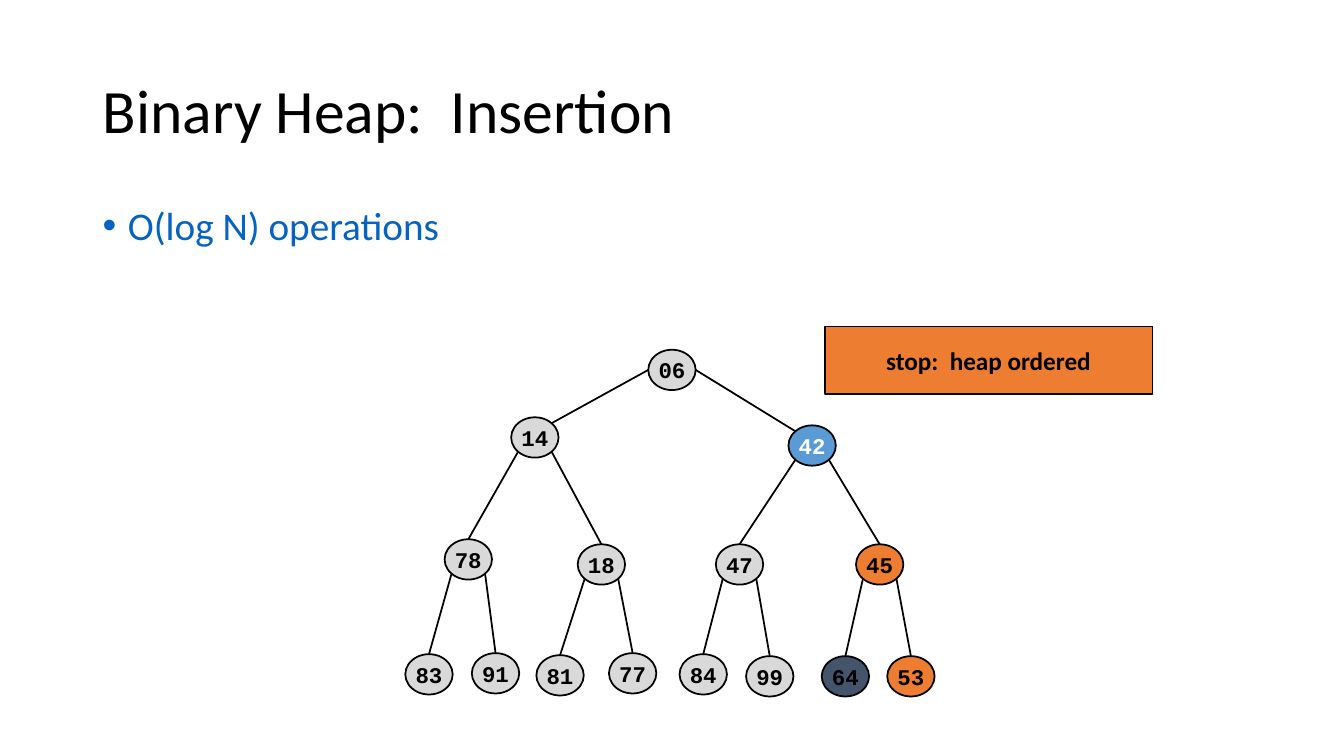
import math
from dataclasses import dataclass

from lxml import etree
from pptx import Presentation
from pptx.dml.color import RGBColor
from pptx.enum.shapes import MSO_CONNECTOR, MSO_SHAPE
from pptx.enum.text import MSO_ANCHOR, MSO_AUTO_SIZE, PP_ALIGN
from pptx.oxml.ns import qn
from pptx.util import Inches, Pt

STRAIGHT = MSO_CONNECTOR.STRAIGHT
OVAL, RECTANGLE = MSO_SHAPE.OVAL, MSO_SHAPE.RECTANGLE
TOP, MIDDLE = MSO_ANCHOR.TOP, MSO_ANCHOR.MIDDLE
LEFT, CENTER = PP_ALIGN.LEFT, PP_ALIGN.CENTER
NO_AUTOFIT = MSO_AUTO_SIZE.NONE

BLACK, WHITE, GREY = "000000", "FFFFFF", "D9D9D9"
BLUE, ORANGE, SLATE, LINK_BLUE = "5B9BD5", "ED7D31", "44546A", "0563C1"
NODE_WIDTH, NODE_HEIGHT = 0.47, 0.4
DIAGONAL = math.sqrt(0.5)


@dataclass
class Node:
    key: str
    left: float
    top: float
    fill: str = GREY
    color: str = BLACK

    def rim(self, across: float, down: float) -> tuple[float, float]:
        """Point on the outline, in half axes from the centre."""
        return (self.left + NODE_WIDTH / 2 * (1 + across),
                self.top + NODE_HEIGHT / 2 * (1 + down))


# Level order: the children of node i are 2i + 1 and 2i + 2
HEAP = [
    Node("06", 6.43, 3.47),
    Node("14", 5.07, 4.14),
    Node("42", 7.82, 4.22, BLUE, WHITE),
    Node("78", 4.41, 5.35),
    Node("18", 5.73, 5.4),
    Node("47", 7.1, 5.4),
    Node("45", 8.49, 5.4, ORANGE),
    Node("83", 4.02, 6.49),
    Node("91", 4.68, 6.48),
    Node("81", 5.32, 6.5),
    Node("77", 6.04, 6.48),
    Node("84", 6.74, 6.49),
    Node("99", 7.4, 6.51),
    Node("64", 8.15, 6.51, SLATE),
    Node("53", 8.8, 6.51, ORANGE),
]


def rgb(value: str) -> RGBColor:
    return RGBColor.from_string(value)


def write(box, text: str, size: int, color: str, font: str = "Calibri",
          bold: bool = False, align=CENTER, anchor=MIDDLE, wrap: bool = False):
    frame = box.text_frame
    frame.text = text
    frame_format = {"auto_size": NO_AUTOFIT, "word_wrap": wrap, "vertical_anchor": anchor}
    for name, value in frame_format.items():
        setattr(frame, name, value)
    para = frame.paragraphs[0]
    para.alignment = align
    span = para.runs[0]
    for name, value in {"name": font, "size": Pt(size), "bold": bold}.items():
        setattr(span.font, name, value)
    span.font.color.rgb = rgb(color)
    return para


def add_filled_shape(page, kind, left: float, top: float, width: float,
                     height: float, fill: str):
    shape = page.shapes.add_shape(
        kind, Inches(left), Inches(top), Inches(width), Inches(height))
    shape.shadow.inherit = False
    shape.fill.solid()
    shape.fill.fore_color.rgb = rgb(fill)
    shape.line.color.rgb = rgb(BLACK)
    shape.line.width = Pt(1.25)
    return shape


def add_edge(page, index: int) -> None:
    """Join a node to its parent."""
    child, parent = HEAP[index], HEAP[(index - 1) // 2]
    side = -1 if index % 2 else 1
    if index <= 2:
        start = parent.rim(side, 0)
        end = child.rim(-side * DIAGONAL, -DIAGONAL)
    else:
        start = parent.rim(side * DIAGONAL, DIAGONAL)
        end = child.rim(0, -1)
    edge = page.shapes.add_connector(STRAIGHT, *map(Inches, start + end))
    edge.line.color.rgb = rgb(BLACK)
    edge.line.width = Pt(1.25)
    etree.SubElement(edge._element.spPr, qn("a:effectLst"))


def add_node(page, node: Node) -> None:
    shape = add_filled_shape(
        page, OVAL, node.left, node.top, NODE_WIDTH, NODE_HEIGHT, node.fill)
    write(shape, node.key, 16, node.color, "Courier New", bold=True)


def add_bullet(para) -> None:
    properties = para._p.get_or_add_pPr()
    properties.set("marL", str(Inches(0.25)))
    properties.set("indent", str(Inches(-0.25)))
    font = etree.SubElement(properties, qn("a:buFont"))
    font.set("typeface", "Arial")
    bullet = etree.SubElement(properties, qn("a:buChar"))
    bullet.set("char", "•")


def main() -> None:
    deck = Presentation()
    deck.slide_width, deck.slide_height = Inches(13.33), Inches(7.5)
    page = deck.slides.add_slide(deck.slide_layouts[5])

    # Title
    title = page.shapes.title
    title_place = {"left": 0.92, "top": 0.4, "width": 11.5, "height": 1.45}
    for name, value in title_place.items():
        setattr(title, name, Inches(value))
    para = write(title, "Binary Heap:  Insertion", 44, BLACK, align=LEFT, wrap=True)
    para.line_spacing = 0.9

    # Running time
    body = page.shapes.add_textbox(Inches(0.92), Inches(2), Inches(11.5), Inches(4.76))
    para = write(body, "O(log N) operations", 28, LINK_BLUE,
                 align=LEFT, anchor=TOP, wrap=True)
    para.line_spacing = 0.9
    para.space_before = Pt(10)
    add_bullet(para)

    # Heap: edges behind, nodes in front
    for index in range(1, len(HEAP)):
        add_edge(page, index)
    for node in HEAP:
        add_node(page, node)

    # Result
    result = add_filled_shape(page, RECTANGLE, 8.18, 3.24, 3.25, 0.67, ORANGE)
    write(result, "stop:  heap ordered", 18, BLACK, bold=True)

    deck.save("out.pptx")


if __name__ == "__main__":
    main()
